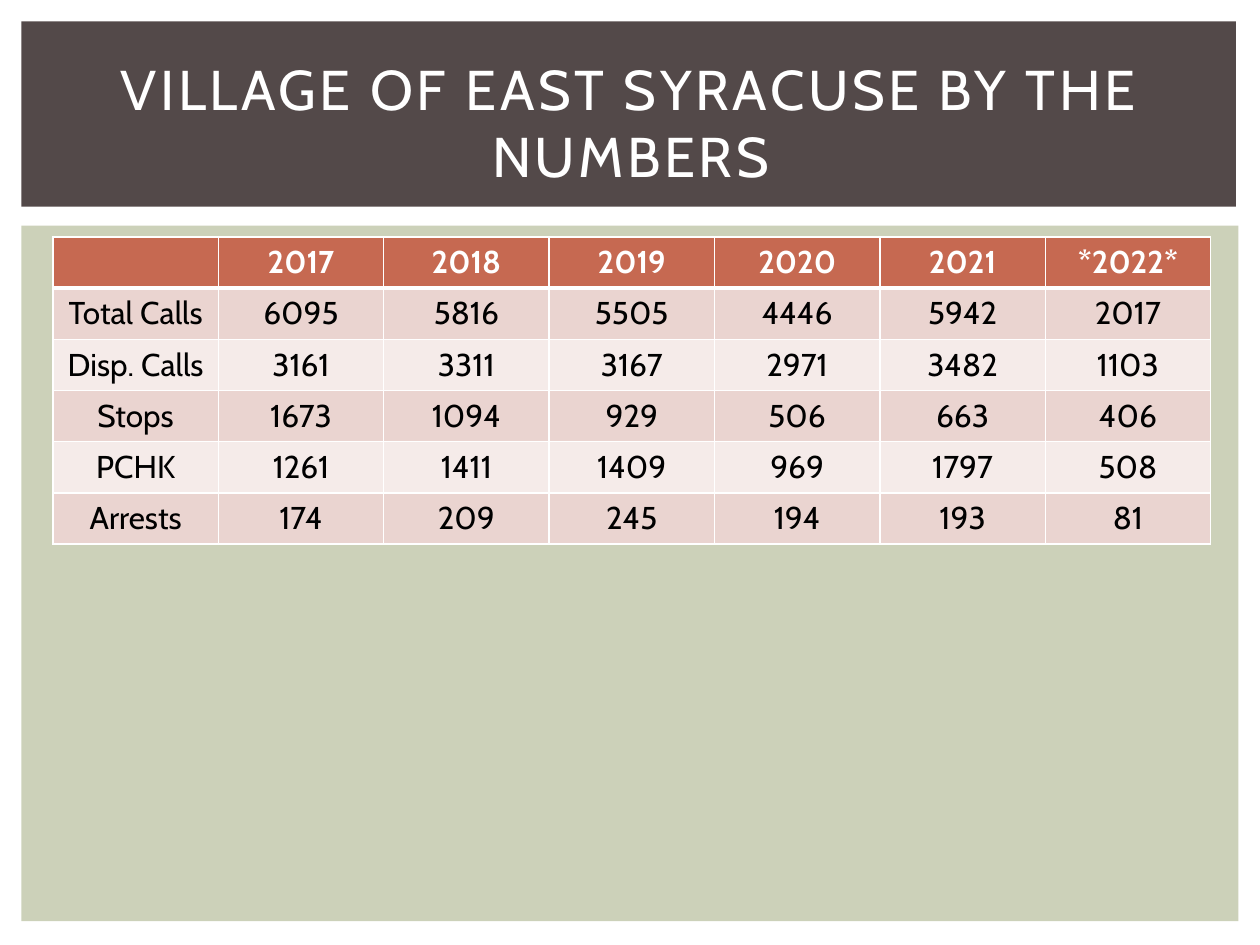
from dataclasses import dataclass

from lxml.etree import SubElement
from pptx import Presentation
from pptx.dml.color import RGBColor
from pptx.enum.shapes import MSO_SHAPE
from pptx.enum.text import MSO_ANCHOR, MSO_AUTO_SIZE, PP_ALIGN
from pptx.oxml.ns import qn
from pptx.util import Inches, Pt


@dataclass(frozen=True)
class Theme:
    font: str = "Cabin"
    title_size: int = 32
    table_size: int = 18
    white: str = "FFFFFF"
    black: str = "000000"
    body_panel: str = "CCD1B9"
    title_panel: str = "534949"
    header: str = "C66951"
    bands: tuple = ("EAD4D0", "F5EBE9")


theme = Theme()


def format_text(text_frame, size, color, bold=False):
    for paragraph in text_frame.paragraphs:
        paragraph.alignment = PP_ALIGN.CENTER
        for run in paragraph.runs:
            run.font.name = theme.font
            run.font.size = Pt(size)
            run.font.bold = bold
            run.font.color.rgb = RGBColor.from_string(color)


def add_borders(cell, top, bottom):
    """Draw white cell borders; top and bottom widths are in points."""
    properties = cell._tc.get_or_add_tcPr()
    for tag, width in (("lnL", 1), ("lnR", 1), ("lnT", top), ("lnB", bottom)):
        line = SubElement(properties, qn(f"a:{tag}"), w=str(Pt(width)))
        fill = SubElement(line, qn("a:solidFill"))
        SubElement(fill, qn("a:srgbClr"), val=theme.white)


presentation = Presentation()
presentation.slide_width = Inches(10)
presentation.slide_height = Inches(7.5)
slide = presentation.slides.add_slide(presentation.slide_layouts[5])

# Background panels
for top, width, height, color in (
    (1.79, 9.66, 5.52, theme.body_panel),
    (0.17, 9.64, 1.47, theme.title_panel),
):
    panel = slide.shapes.add_shape(
        MSO_SHAPE.RECTANGLE, Inches(0.17), Inches(top), Inches(width), Inches(height)
    )
    panel.shadow.inherit = False
    panel.fill.solid()
    panel.fill.fore_color.rgb = RGBColor.from_string(color)
    panel.line.fill.background()

# Yearly figures
rows = [
    ["", "2017", "2018", "2019", "2020", "2021", "*2022*"],
    ["Total Calls", "6095", "5816", "5505", "4446", "5942", "2017"],
    ["Disp. Calls", "3161", "3311", "3167", "2971", "3482", "1103"],
    ["Stops", "1673", "1094", "929", "506", "663", "406"],
    ["PCHK", "1261", "1411", "1409", "969", "1797", "508"],
    ["Arrests", "174", "209", "245", "194", "193", "81"],
]
table = slide.shapes.add_table(
    len(rows), len(rows[0]), Inches(0.42), Inches(1.88), Inches(9.19), Inches(2.44)
).table
for row_index, values in enumerate(rows):
    is_header = row_index == 0
    fill_color = theme.header if is_header else theme.bands[(row_index - 1) % 2]
    for column_index, value in enumerate(values):
        cell = table.cell(row_index, column_index)
        cell.text_frame.text = value
        format_text(
            cell.text_frame,
            theme.table_size,
            theme.white if is_header else theme.black,
            bold=is_header,
        )
        add_borders(cell, top=3 if row_index == 1 else 1, bottom=3 if is_header else 1)
        cell.fill.solid()
        cell.fill.fore_color.rgb = RGBColor.from_string(fill_color)

# Title, brought in front of its panel
title = slide.shapes.title
title.left, title.top = Inches(0.42), Inches(0.39)
title.width, title.height = Inches(9.17), Inches(1.15)
title.text_frame.text = "VILLAGE OF EAST SYRACUSE BY THE NUMBERS"
title.text_frame.word_wrap = True
title.text_frame.auto_size = MSO_AUTO_SIZE.NONE
title.text_frame.vertical_anchor = MSO_ANCHOR.MIDDLE
format_text(title.text_frame, theme.title_size, theme.white)
title_run = title.text_frame.paragraphs[0].runs[0]
title_run._r.get_or_add_rPr().set("spc", "200")
title.element.getparent().append(title.element)

presentation.save("out.pptx")
